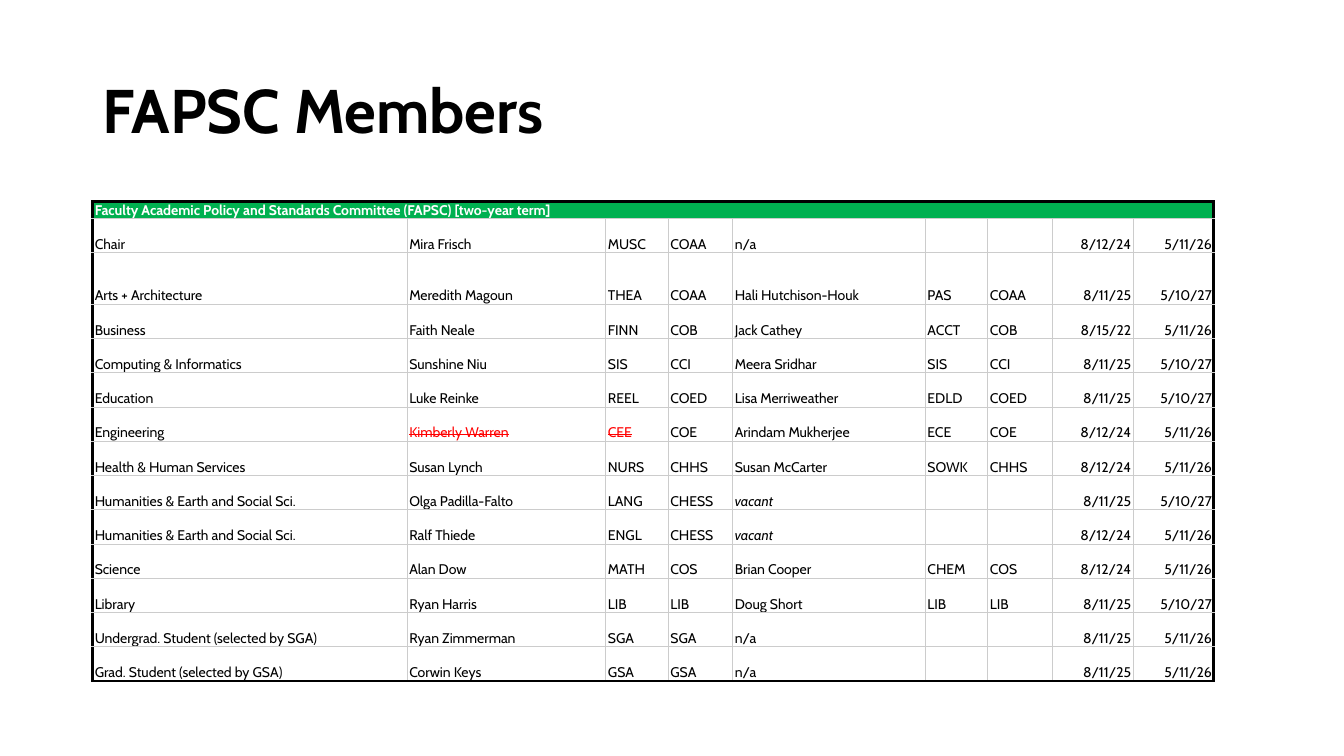
from lxml import etree
from pptx import Presentation
from pptx.dml.color import RGBColor
from pptx.enum.text import MSO_ANCHOR, PP_ALIGN
from pptx.oxml.ns import qn
from pptx.util import Inches, Pt

MIDDLE, BOTTOM = MSO_ANCHOR.MIDDLE, MSO_ANCHOR.BOTTOM
LEFT, RIGHT = PP_ALIGN.LEFT, PP_ALIGN.RIGHT

FONT = "Cabin"
BLACK, WHITE, GREEN, RED, GREY = "000000", "FFFFFF", "00B050", "FF0000", "CCCCCC"
TITLE = "FAPSC Members"
HEADING = "Faculty Academic Policy and Standards Committee (FAPSC) [two-year term]"
MEMBERS = [
    ("Chair", "Mira Frisch", "MUSC", "COAA", "n/a", "", "", "8/12/24", "5/11/26"),
    ("Arts + Architecture", "Meredith Magoun", "THEA", "COAA", "Hali Hutchison-Houk", "PAS", "COAA", "8/11/25", "5/10/27"),
    ("Business", "Faith Neale", "FINN", "COB", "Jack Cathey", "ACCT", "COB", "8/15/22", "5/11/26"),
    ("Computing & Informatics", "Sunshine Niu", "SIS", "CCI", "Meera Sridhar", "SIS", "CCI", "8/11/25", "5/10/27"),
    ("Education", "Luke Reinke", "REEL", "COED", "Lisa Merriweather", "EDLD", "COED", "8/11/25", "5/10/27"),
    ("Engineering", "Kimberly Warren", "CEE", "COE", "Arindam Mukherjee", "ECE", "COE", "8/12/24", "5/11/26"),
    ("Health & Human Services", "Susan Lynch", "NURS", "CHHS", "Susan McCarter", "SOWK", "CHHS", "8/12/24", "5/11/26"),
    ("Humanities & Earth and Social Sci.", "Olga Padilla-Falto", "LANG", "CHESS", "vacant", "", "", "8/11/25", "5/10/27"),
    ("Humanities & Earth and Social Sci.", "Ralf Thiede", "ENGL", "CHESS", "vacant", "", "", "8/12/24", "5/11/26"),
    ("Science", "Alan Dow", "MATH", "COS", "Brian Cooper", "CHEM", "COS", "8/12/24", "5/11/26"),
    ("Library", "Ryan Harris", "LIB", "LIB", "Doug Short", "LIB", "LIB", "8/11/25", "5/10/27"),
    ("Undergrad. Student (selected by SGA)", "Ryan Zimmerman", "SGA", "SGA", "n/a", "", "", "8/11/25", "5/11/26"),
    ("Grad. Student (selected by GSA)", "Corwin Keys", "GSA", "GSA", "n/a", "", "", "8/11/25", "5/11/26"),
]
DEPARTED = ("Kimberly Warren", "CEE")
COLUMN_WIDTHS = [3.12, 1.97, 0.62, 0.64, 1.91, 0.62, 0.64, 0.8, 0.8]
FIRST_DATE_COLUMN = 7
LINE_HEIGHT = 0.17
ROW_LINES = [1, 2, 3] + [2] * (len(MEMBERS) - 2)
MARGIN, TABLE_TOP = 0.92, 2


def color(value):
    return RGBColor.from_string(value)


def style(para, size, tint, bold=False, italic=False):
    font = para.font
    font.name, font.size, font.bold, font.italic = FONT, Pt(size), bold, italic
    font.color.rgb = color(tint)


def add_border(cell, side, outer):
    tint, width = (BLACK, 2.25) if outer else (GREY, 0.75)
    line = etree.SubElement(cell._tc.get_or_add_tcPr(), qn("a:ln" + side), w=str(Pt(width)))
    fill = etree.SubElement(line, qn("a:solidFill"))
    etree.SubElement(fill, qn("a:srgbClr"), val=tint)


def fill_cell(cell, text, row, column):
    heading = row == 0
    cell.margin_left = cell.margin_right = Inches(0.02)
    cell.margin_top = cell.margin_bottom = 0
    cell.vertical_anchor = BOTTOM
    add_border(cell, "L", column == 0)
    add_border(cell, "R", heading or column == len(COLUMN_WIDTHS) - 1)
    add_border(cell, "T", heading)
    add_border(cell, "B", row == len(MEMBERS))
    cell.fill.solid()
    cell.fill.fore_color.rgb = color(GREEN if heading else WHITE)
    para = cell.text_frame.paragraphs[0]
    para.alignment = RIGHT if column >= FIRST_DATE_COLUMN else LEFT
    departed = text in DEPARTED
    tint = WHITE if heading else RED if departed else BLACK
    style(para, 10, tint, bold=heading, italic=text == "vacant")
    if text:
        span = para.add_run()
        span.text = text
        if departed:
            span._r.get_or_add_rPr().set("strike", "sngStrike")


def add_title(page):
    box = page.shapes.add_textbox(Inches(MARGIN), Inches(0.4), Inches(11.5), Inches(1.45))
    frame = box.text_frame
    frame.word_wrap = True
    frame.vertical_anchor = MIDDLE
    para = frame.paragraphs[0]
    para.text = TITLE
    para.line_spacing = 0.9
    style(para, 44, BLACK, bold=True)


def add_members(page):
    rows = [(HEADING,) + ("",) * (len(COLUMN_WIDTHS) - 1)] + MEMBERS
    heights = [lines * LINE_HEIGHT for lines in ROW_LINES]
    table = page.shapes.add_table(
        len(rows), len(COLUMN_WIDTHS), Inches(MARGIN), Inches(TABLE_TOP),
        Inches(sum(COLUMN_WIDTHS)), Inches(sum(heights))).table
    table.first_row = table.horz_banding = False
    for column, width in zip(table.columns, COLUMN_WIDTHS):
        column.width = Inches(width)
    for row, height in zip(table.rows, heights):
        row.height = Inches(height)
    for row, texts in enumerate(rows):
        for column, text in enumerate(texts):
            fill_cell(table.cell(row, column), text, row, column)
    table.cell(0, 0).merge(table.cell(0, len(COLUMN_WIDTHS) - 1))


def main():
    deck = Presentation()
    deck.slide_width, deck.slide_height = Inches(13.33), Inches(7.5)
    page = deck.slides.add_slide(deck.slide_layouts[6])
    add_title(page)
    add_members(page)
    deck.save("out.pptx")


if __name__ == "__main__":
    main()
